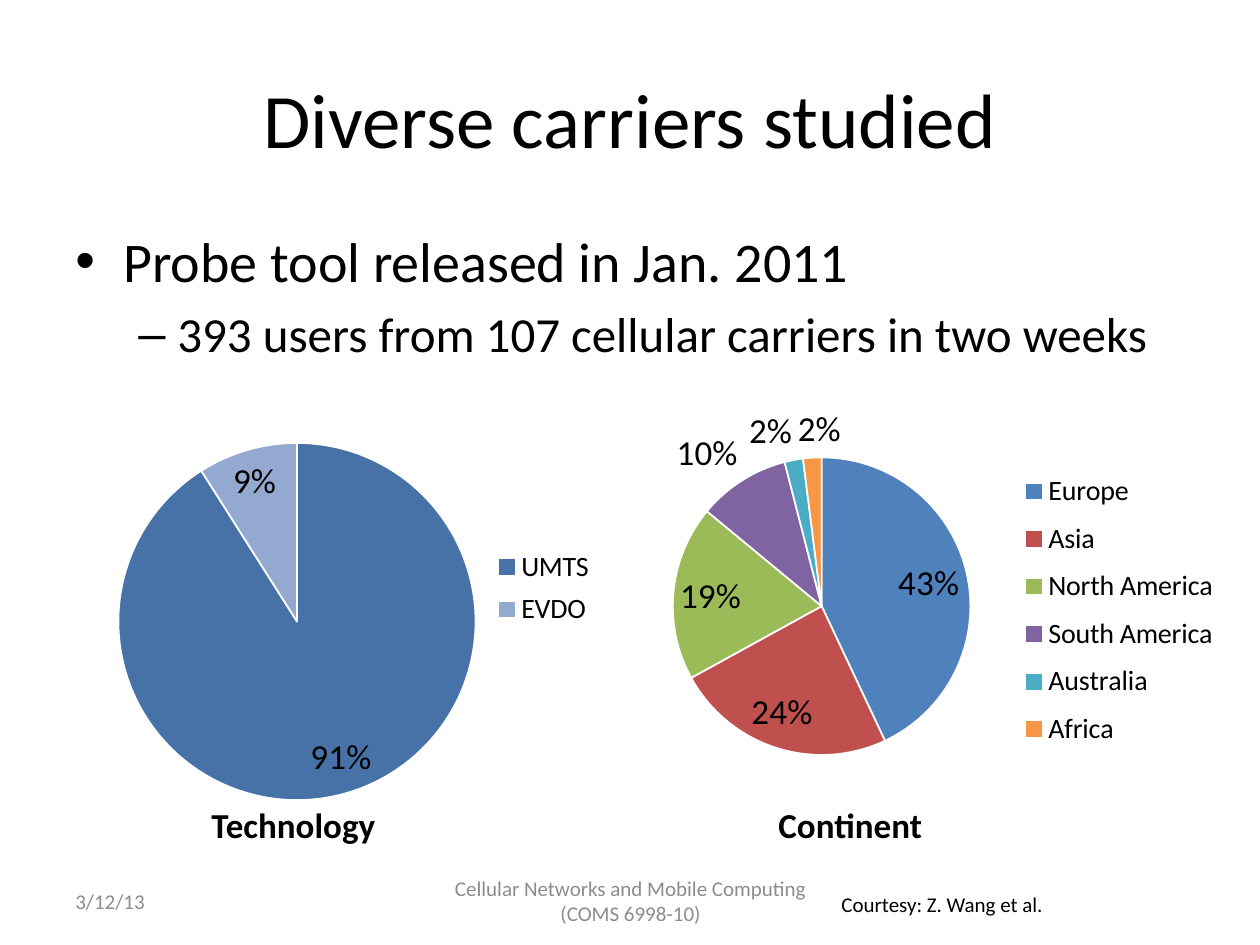
from dataclasses import dataclass

from lxml import etree
from pptx import Presentation
from pptx.chart.data import CategoryChartData
from pptx.dml.color import RGBColor
from pptx.enum.chart import XL_CHART_TYPE, XL_LABEL_POSITION, XL_LEGEND_POSITION
from pptx.enum.text import MSO_ANCHOR, PP_ALIGN
from pptx.oxml.ns import qn
from pptx.util import Inches, Pt

PIE = XL_CHART_TYPE.PIE
FIT = XL_LABEL_POSITION.BEST_FIT
RIGHT = XL_LEGEND_POSITION.RIGHT
TOP, MIDDLE = MSO_ANCHOR.TOP, MSO_ANCHOR.MIDDLE
LEFT, CENTER = PP_ALIGN.LEFT, PP_ALIGN.CENTER
WIDE, HIGH = Inches(10), Inches(7.5)


@dataclass(frozen=True)
class Theme:
    """Colours and type sizes of the slide."""
    font: str = "Calibri"
    ink: str = "000000"
    grey: str = "8C8C8C"
    edge: str = "FFFFFF"
    title: int = 44
    body: tuple = (32, 28)
    label: int = 20
    key: int = 16
    foot: int = 12
    blues: tuple = ("4672A8", "93A9D0")
    hues: tuple = ("4F81BD", "C0504D", "9BBB59", "8064A2", "4BACC6", "F79646")


THEME = Theme()


def place(x, y, w, h):
    """Turn shares of the slide into lengths."""
    return round(x * WIDE), round(y * HIGH), round(w * WIDE), round(h * HIGH)


def style(font, size, color=THEME.ink, bold=False):
    """Set the face, size, colour and weight of a font."""
    font.name, font.size, font.bold = THEME.font, Pt(size), bold
    font.color.rgb = RGBColor.from_string(color)


def add_text(slide, box, text, size, color=THEME.ink, bold=False,
             align=LEFT, anchor=TOP, wrap=True):
    """Add a text box of one paragraph."""
    frame = slide.shapes.add_textbox(*place(*box)).text_frame
    frame.word_wrap, frame.vertical_anchor = wrap, anchor
    para = frame.paragraphs[0]
    para.text, para.alignment = text, align
    style(para.font, size, color, bold)


def add_list(slide, box, items):
    """Add a bulleted list from rows of mark, margin, hang and text."""
    frame = slide.shapes.add_textbox(*place(*box)).text_frame
    frame.word_wrap = True
    for level, (mark, margin, hang, text) in enumerate(items):
        para = frame.add_paragraph() if level else frame.paragraphs[0]
        size = THEME.body[level]
        para.text, para.level = text, level
        para.space_before = Pt(size * 0.2)
        style(para.font, size)
        props = para._p.get_or_add_pPr()
        props.set("marL", str(Inches(margin)))
        props.set("indent", str(-Inches(hang)))
        font = etree.Element(qn("a:buFont"), typeface="Arial")
        bullet = etree.Element(qn("a:buChar"), char=mark)
        spot = props.find(qn("a:spcBef"))
        spot.addnext(font)
        font.addnext(bullet)


def set_area(node, index, area, inner=False):
    """Fix a chart part to shares of the chart's size."""
    for old in node.findall(qn("c:layout")):
        node.remove(old)
    layout = etree.Element(qn("c:layout"))
    manual = etree.SubElement(layout, qn("c:manualLayout"))
    rows = [("layoutTarget", "inner")] if inner else []
    rows += [("xMode", "edge"), ("yMode", "edge"), *zip("xywh", area)]
    for tag, value in rows:
        etree.SubElement(manual, qn(f"c:{tag}"), val=str(value))
    node.insert(index, layout)


def add_pie(slide, box, shares, hues, pie, key):
    """Add a pie chart with percent labels and a legend."""
    data = CategoryChartData()
    data.categories = list(shares)
    data.add_series("Series 1", list(shares.values()))
    chart = slide.shapes.add_chart(PIE, *place(*box), data).chart
    chart.has_title = False
    style(chart.font, THEME.key)

    chart.has_legend = True
    legend = chart.legend
    legend.position, legend.include_in_layout = RIGHT, False
    style(legend.font, THEME.key)

    plot = chart.plots[0]
    plot.vary_by_categories = True
    plot.has_data_labels = True
    labels = plot.data_labels
    labels.show_percentage, labels.show_value = True, False
    labels.number_format, labels.number_format_is_linked = "0%", False
    labels.position = FIT
    style(labels.font, THEME.label)

    for index, hue in enumerate(hues):
        part = plot.series[0].points[index].format
        part.fill.solid()
        part.fill.fore_color.rgb = RGBColor.from_string(hue)
        part.line.color.rgb = RGBColor.from_string(THEME.edge)
        part.line.width = Pt(1)

    set_area(chart._chartSpace.find(".//" + qn("c:plotArea")), 0, pie, True)
    set_area(legend._element, 1, key)


def main():
    """Build and save the slide."""
    deck = Presentation()
    deck.slide_width, deck.slide_height = WIDE, HIGH
    slide = deck.slides.add_slide(deck.slide_layouts[6])

    add_text(slide, (0.05, 0.04, 0.9, 0.17), "Diverse carriers studied",
             THEME.title, align=CENTER, anchor=MIDDLE)
    add_list(slide, (0.05, 0.2333, 0.892, 0.66), [
        ("•", 0.38, 0.38, "Probe tool released in Jan. 2011"),
        ("–", 0.81, 0.31, "393 users from 107 cellular carriers in two weeks"),
    ])

    add_pie(slide, (0.058, 0.401, 0.45, 0.467), {"UMTS": 91, "EVDO": 9},
            THEME.blues, (0.08, 0.14, 0.63, 0.82), (0.73, 0.37, 0.2, 0.21))
    lands = {"Europe": 43, "Asia": 24, "North America": 19,
             "South America": 10, "Australia": 2, "Africa": 2}
    add_pie(slide, (0.45, 0.411, 0.525, 0.452), lands,
            THEME.hues, (0.16, 0.16, 0.45, 0.7), (0.68, 0.17, 0.31, 0.7))

    for x, w, text in ((0.158, 0.151, "Technology"), (0.608, 0.135, "Continent")):
        add_text(slide, (x, 0.844, w, 0.059), text, THEME.label,
                 bold=True, wrap=False)

    add_text(slide, (0.658, 0.937, 0.183, 0.04), "Courtesy: Z. Wang et al.",
             THEME.foot, wrap=False)
    course = "Cellular Networks and Mobile Computing (COMS 6998-10)"
    for x, w, text, align in ((0.05, 0.233, "3/12/13", LEFT),
                              (0.342, 0.317, course, CENTER)):
        add_text(slide, (x, 0.927, w, 0.053), text, THEME.foot, THEME.grey,
                 align=align, anchor=MIDDLE)

    deck.save("out.pptx")


if __name__ == "__main__":
    main()
